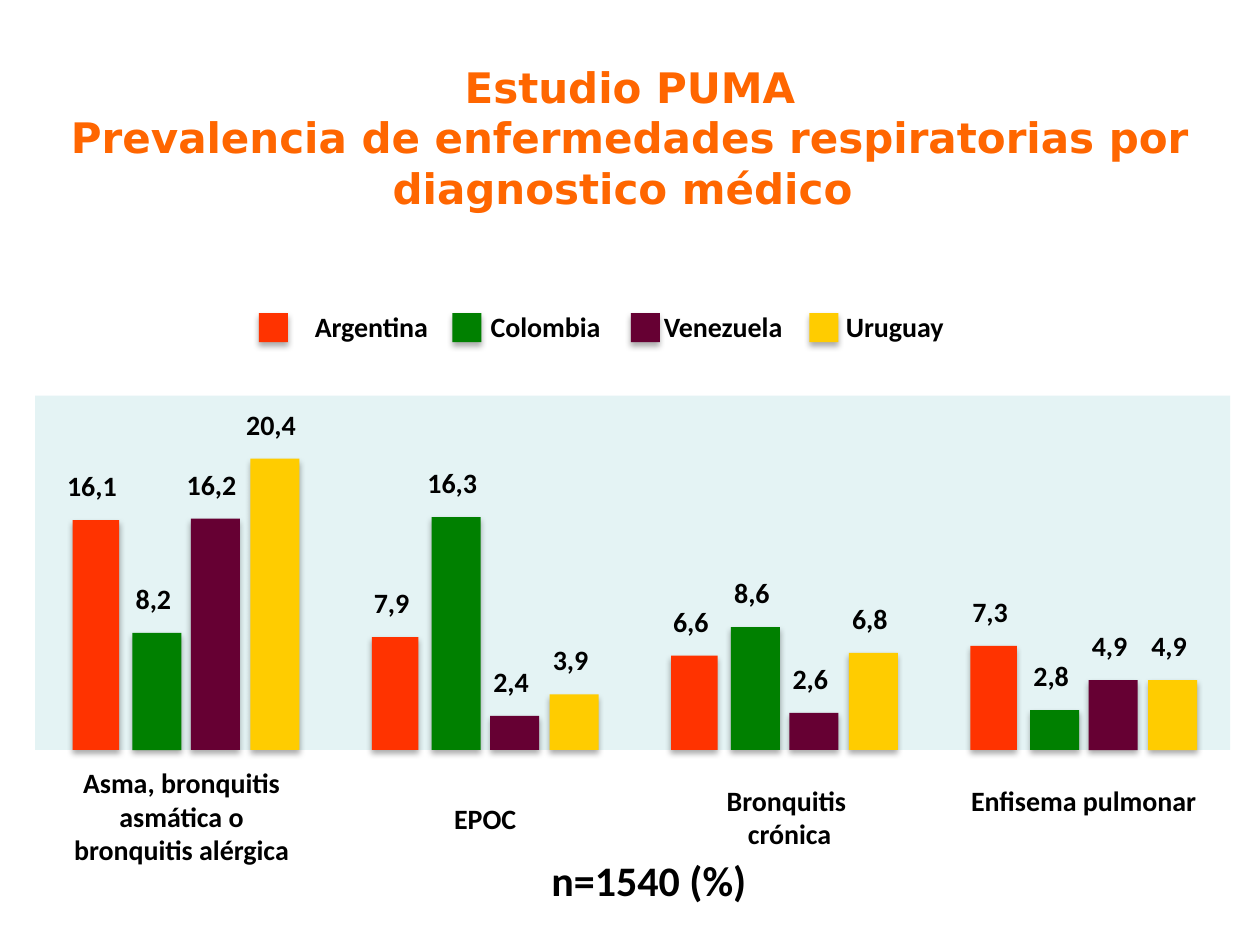
from dataclasses import dataclass

from lxml import etree
from pptx import Presentation
from pptx.dml.color import RGBColor
from pptx.enum.shapes import MSO_SHAPE
from pptx.enum.text import PP_ALIGN
from pptx.oxml.ns import qn
from pptx.util import Pt

RECT = MSO_SHAPE.RECTANGLE
LEFT, CENTER = PP_ALIGN.LEFT, PP_ALIGN.CENTER

BASE = 428.6    # foot of all bars
SCALE = 8.16    # points per percent
START = 41.5    # first bar of the first group
PITCH = 171     # from group to group


@dataclass
class Box:
    x: float
    y: float
    w: float
    h: float


@dataclass
class Land:
    name: str
    tint: str
    shift: float    # bar offset within a group
    width: float
    key: float      # left edge of the legend square


@dataclass
class Group:
    label: str
    rates: tuple[float, ...]
    box: Box


LANDS = [
    Land("Argentina", "FF3300", 0, 26.6, 148),
    Land("Colombia", "008000", 34.2, 28, 258.5),
    Land("Venezuela", "660033", 67.6, 28, 360.5),
    Land("Uruguay", "FFCC00", 101.6, 28, 462.5),
]
GROUPS = [
    Group("Asma, bronquitis asmática o bronquitis alérgica",
          (16.1, 8.2, 16.2, 20.4), Box(26, 434, 155.5, 68.5)),
    Group("EPOC", (7.9, 16.3, 2.4, 3.9), Box(199.5, 454.5, 155.5, 28)),
    Group("Bronquitis \ncrónica", (6.6, 8.6, 2.6, 6.8),
          Box(373.5, 444, 155.5, 48)),
    Group("Enfisema pulmonar", (7.3, 2.8, 4.9, 4.9),
          Box(541.5, 444, 155.5, 48)),
]
TABS = (100.5, 199.5, 303.5)

deck = Presentation()
deck.slide_width, deck.slide_height = Pt(720), Pt(540)
slide = deck.slides.add_slide(deck.slide_layouts[6])


def tone(code: str) -> RGBColor:
    return RGBColor.from_string(code)


def place(box: Box) -> tuple[Pt, ...]:
    return Pt(box.x), Pt(box.y), Pt(box.w), Pt(box.h)


def block(box: Box, tint: str, shade: bool = False) -> None:
    """Draw a filled rectangle, with a soft shadow below if asked."""
    shape = slide.shapes.add_shape(RECT, *place(box))
    shape.fill.solid()
    shape.fill.fore_color.rgb = tone(tint)
    shape.line.fill.background()
    shape.shadow.inherit = False
    if shade:
        effects = shape.element.spPr.find(qn("a:effectLst"))
        cast = etree.SubElement(effects, qn("a:outerShdw"), dir="5400000",
                                blurRad=str(Pt(3.5)), dist=str(Pt(2.2)),
                                algn="ctr", rotWithShape="0")
        ink = etree.SubElement(cast, qn("a:srgbClr"), val="000000")
        etree.SubElement(ink, qn("a:alpha"), val="32000")


def write(box: Box, text: str, size: float = 16, tint: str = "000000",
          font: str = "Calibri", align: PP_ALIGN = CENTER,
          wrap: bool = True, tabs: tuple[float, ...] = ()) -> None:
    """Add a bold text box; each line of text is a paragraph."""
    frame = slide.shapes.add_textbox(*place(box)).text_frame
    frame.word_wrap = wrap
    frame.text = text
    for para in frame.paragraphs:
        para.alignment = align
        for run in para.runs:
            run.font.size, run.font.bold = Pt(size), True
            run.font.name = font
            run.font.color.rgb = tone(tint)
        if tabs:
            props = para._p.get_or_add_pPr()
            stops = etree.SubElement(props, qn("a:tabLst"))
            for stop in tabs:
                etree.SubElement(stops, qn("a:tab"), pos=str(Pt(stop)),
                                 algn="l")


def rate(land: Land, value: float, left: float) -> None:
    """Draw one bar and its value, centred above it."""
    high = value * SCALE
    bar = Box(left + land.shift, BASE - high, land.width, high)
    block(bar, land.tint, shade=True)
    wide = 47 if value >= 10 else 38.5
    spot = Box(bar.x + (bar.w - wide) / 2, bar.y - 33, wide, 28)
    write(spot, f"{value:.1f}".replace(".", ","), align=LEFT, wrap=False)


# Title
write(Box(0, 31.5, 720, 94.5),
      "Estudio PUMA\nPrevalencia de enfermedades respiratorias por "
      "diagnostico médico ", 24, "FF6600", "DejaVu Sans")

# Plot area, bars and group labels
block(Box(20, 226, 683, 202.6), "E4F3F4")
for i, group in enumerate(GROUPS):
    write(group.box, group.label)
    for land, value in zip(LANDS, group.rates):
        rate(land, value, START + i * PITCH)

# Legend
for land in LANDS:
    block(Box(land.key, 179, 16.6, 16.6), land.tint, shade=True)
write(Box(172.8, 173.5, 493, 26.5), "\t".join(land.name for land in LANDS),
      align=LEFT, tabs=TABS)

# Sample size
write(Box(259, 484.5, 229, 36), "n=1540 (%) ", 24)

deck.save("out.pptx")
